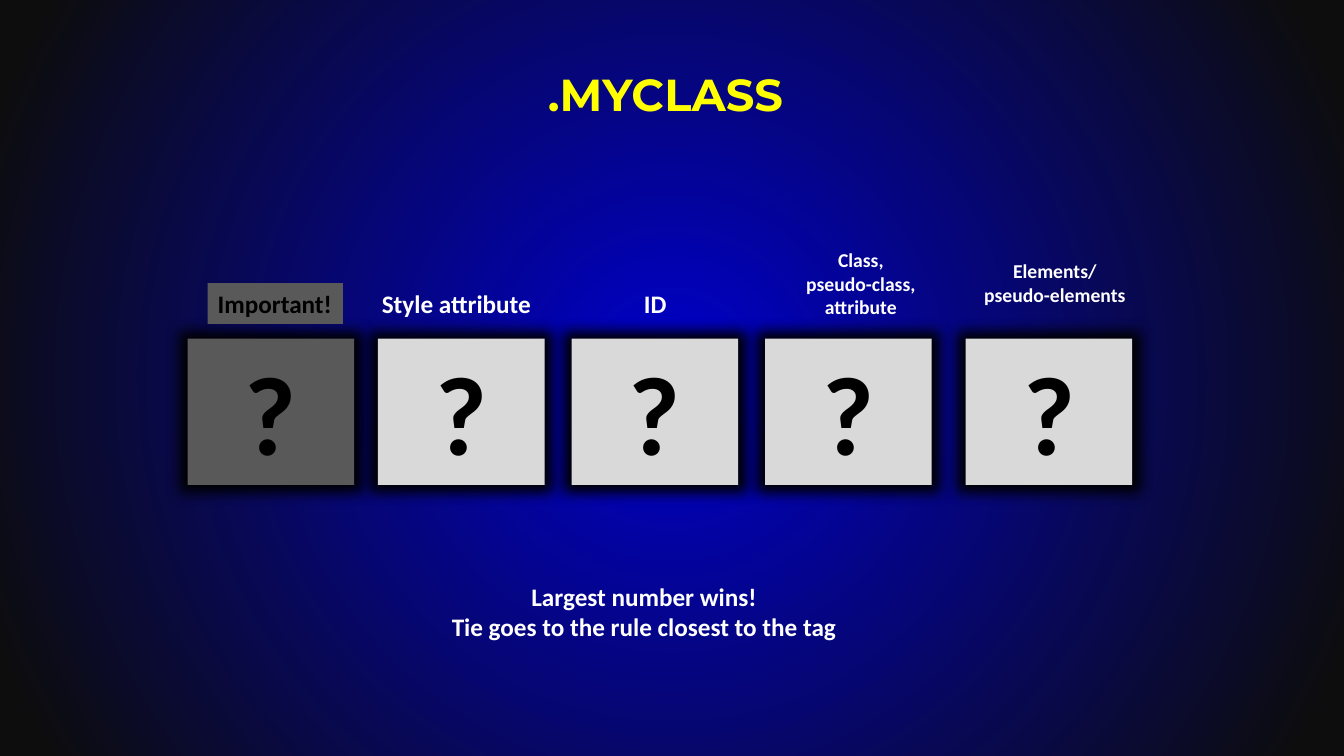
from collections import namedtuple

from lxml.etree import SubElement
from pptx import Presentation
from pptx.dml.color import RGBColor
from pptx.enum.shapes import MSO_SHAPE
from pptx.enum.text import MSO_ANCHOR, MSO_AUTO_SIZE, PP_ALIGN
from pptx.oxml import parse_xml
from pptx.oxml.ns import nsdecls, qn
from pptx.util import Pt

Box = namedtuple("Box", "left top width height")
Label = namedtuple("Label", "lines size align wrap box")
Category = namedtuple("Category", "left fill label")

WHITE, BLACK, YELLOW = "FFFFFF", "000000", "FFFF00"
DIMMED, LIGHT = "595959", "D9D9D9"
LEFT, CENTER = PP_ALIGN.LEFT, PP_ALIGN.CENTER
TILE_WIDTH, TILE_HEIGHT = 119, 104.4

# Tile lefts and label boxes are measured from the top left of the score row and of each tile.
CATEGORIES = [
    Category(0, DIMMED, Label(["Important!"], 18, LEFT, False, Box(14.4, -39.6, 96.5, 29))),
    Category(136, LIGHT, Label(["Style attribute"], 18, LEFT, False, Box(-4.3, -39.6, 122.4, 29))),
    Category(274.3, LIGHT, Label(["ID"], 18, LEFT, False, Box(44.6, -39.6, 31, 29))),
    Category(412.5, LIGHT, Label(["Class, pseudo-class, attribute"], 14, CENTER, True,
                                 Box(20.9, -68.4, 95, 58.3))),
    Category(555.8, LIGHT, Label(["Elements/", "pseudo-elements"], 14, CENTER, False,
                                 Box(5.7, -60.5, 116, 41))),
]


def color(hex_string):
    return RGBColor.from_string(hex_string)


def points(box):
    return [Pt(value) for value in box]


def write(frame, lines, size, ink, align=CENTER, typeface="Calibri", **frame_format):
    for name, value in frame_format.items():
        setattr(frame, name, value)
    for index, line in enumerate(lines):
        paragraph = frame.paragraphs[0] if index == 0 else frame.add_paragraph()
        paragraph.alignment = align
        run = paragraph.add_run()
        run.text = line
        font_format = {"name": typeface, "size": Pt(size), "bold": True}
        for name, value in font_format.items():
            setattr(run.font, name, value)
        run.font.color.rgb = color(ink)


def paint_background(slide):
    """Fill with a circular gradient, blue in the middle and near black outside."""
    fill = slide.background.fill
    fill.gradient()
    for stop, (position, shade) in zip(fill.gradient_stops, [(0, "0000CC"), (0.95, "0D0D0D")]):
        stop.position = position
        stop.color.rgb = color(shade)
    gradient = slide.element.find(".//" + qn("a:gradFill"))
    circle = parse_xml(
        f'<a:path {nsdecls("a")} path="circle">'
        '<a:fillToRect l="50000" t="50000" r="50000" b="50000"/></a:path>')
    gradient.replace(gradient.find(qn("a:lin")), circle)


def add_title(slide, box):
    title = slide.shapes.title
    title.left, title.top, title.width, title.height = points(box)
    write(title.text_frame, [".MYCLASS "], 32, YELLOW, typeface="Montserrat",
          vertical_anchor=MSO_ANCHOR.MIDDLE, word_wrap=True)


def add_halo(shape):
    """Surround the shape with a soft black shadow on all sides."""
    effects = shape.element.spPr.find(qn("a:effectLst"))
    shadow = SubElement(effects, qn("a:outerShdw"), blurRad=str(Pt(10)), sx="110000",
                        sy="110000", algn="ctr", rotWithShape="0")
    SubElement(shadow, qn("a:srgbClr"), val=BLACK)


def add_rectangle(slide, box, fill):
    rectangle = slide.shapes.add_shape(MSO_SHAPE.RECTANGLE, *points(box))
    rectangle.shadow.inherit = False
    rectangle.fill.solid()
    rectangle.fill.fore_color.rgb = color(fill)
    rectangle.line.fill.background()
    return rectangle


def add_tile(slide, box, fill):
    tile = add_rectangle(slide, box, fill)
    add_halo(tile)
    write(tile.text_frame, ["?"], 80, BLACK, word_wrap=True,
          vertical_anchor=MSO_ANCHOR.TOP, auto_size=MSO_AUTO_SIZE.SHAPE_TO_FIT_TEXT)


def add_label(slide, label, box, fill=None):
    if fill:
        shape = add_rectangle(slide, box, fill)
    else:
        shape = slide.shapes.add_textbox(*points(box))
    write(shape.text_frame, label.lines, label.size, BLACK if fill else WHITE, label.align,
          word_wrap=label.wrap, vertical_anchor=MSO_ANCHOR.TOP,
          auto_size=MSO_AUTO_SIZE.SHAPE_TO_FIT_TEXT)


def add_score_row(slide, left, top):
    for category in CATEGORIES:
        add_tile(slide, Box(left + category.left, top, TILE_WIDTH, TILE_HEIGHT), category.fill)
    for category in CATEGORIES:
        offset = category.label.box
        box = offset._replace(left=left + category.left + offset.left, top=top + offset.top)
        add_label(slide, category.label, box, DIMMED if category.fill == DIMMED else None)


def add_rule(slide, box):
    lines = ["Largest number wins!", "Tie goes to the rule closest to the tag"]
    add_label(slide, Label(lines, 18, CENTER, False, box), box)


def main():
    presentation = Presentation()
    presentation.slide_width, presentation.slide_height = Pt(960), Pt(540)
    slide = presentation.slides.add_slide(presentation.slide_layouts[5])
    paint_background(slide)
    add_score_row(slide, 134, 241.9)
    add_rule(slide, Box(314.6, 411.8, 291, 51))
    add_title(slide, Box(48, 21.6, 864, 90))
    presentation.save("out.pptx")


if __name__ == "__main__":
    main()
